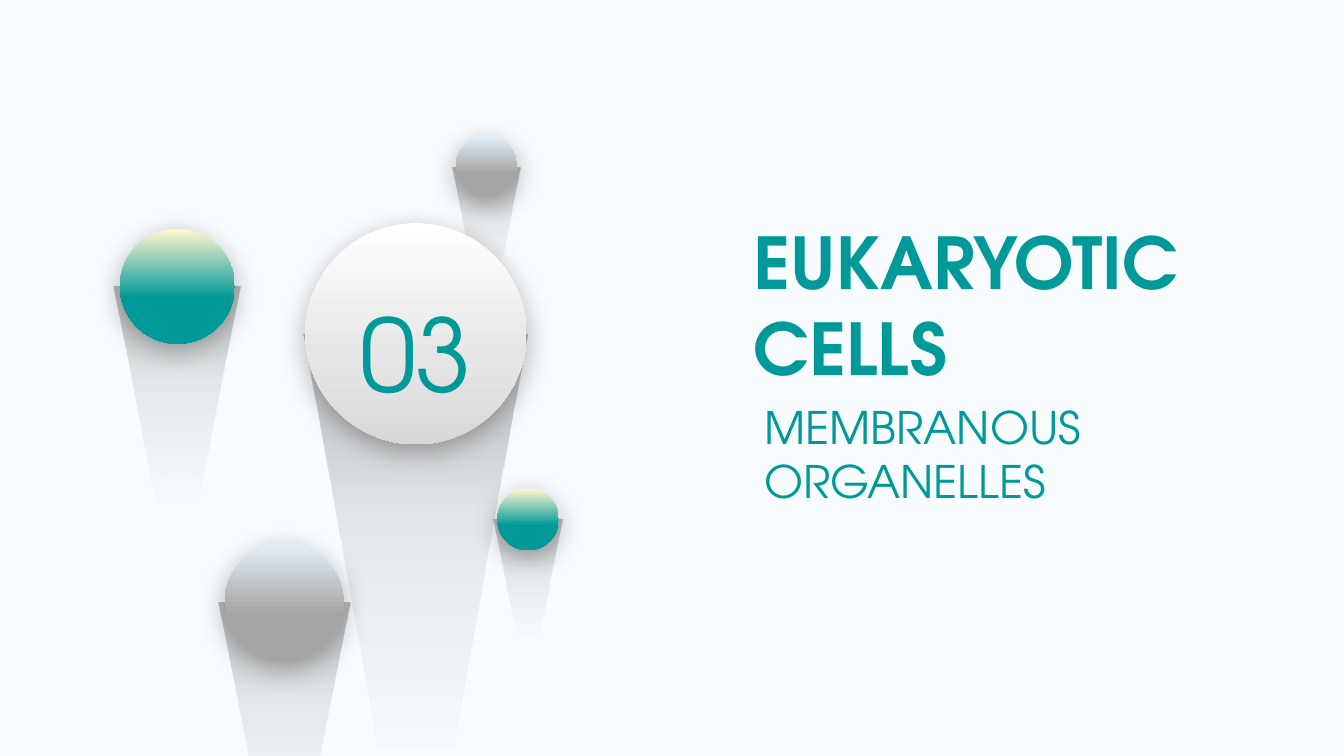
from lxml import etree
from pptx import Presentation
from pptx.dml.color import RGBColor
from pptx.enum import shapes, text
from pptx.oxml import ns
from pptx.util import Pt

FONT = "TeX Gyre Adventor"
HUES = {"back": "F8FCFE", "teal": "009999", "cream": "FFF5CE",
        "sky": "E1EFF9", "gray": "A5A5A5", "white": "FFFFFF",
        "pale": "E7E6E6", "silver": "D8D8D8", "black": "000000",
        "dark": "262626"}

# Gradient stops: position, colour, opacity (positions and opacity in percent)
TAIL = [(0, "black", 0), (30, "black", 0), (50, "black", 4),
        (70, "black", 8), (100, "dark", 30)]
TEAL = [(0, "cream", 100), (1, "cream", 100), (60, "teal", 100), (100, "teal", 100)]
GRAY = [(0, "sky", 100), (1, "sky", 100), (60, "gray", 100), (100, "gray", 100)]
WHITE = [(0, "white", 100), (60, "pale", 100), (100, "silver", 100)]

# Ball centre x and y, ball diameter, tail width and height, stops, label
BALLS = [
    (347.5, 119.1, 44, 49, 119.5, GRAY, ""),
    (297.1, 238.4, 158, 160, 427.7, WHITE, "03"),
    (202.9, 430.2, 85, 94, 230.4, GRAY, ""),
    (377.2, 371.1, 44, 49, 119.5, TEAL, ""),
    (126.7, 204.6, 82, 90.7, 222.3, TEAL, ""),
]

# Both sides of a tail as Bezier curves, in shares of its width and height
SIDES = [[(0.83, 0.67), (0.53, -0.02), (0.5, 0)],
         [(0.47, -0.02), (0.17, 0.67), (0, 1)]]


def shade(shape, stops):
    """Fill a shape from top to bottom, without line or shadow."""
    shape.shadow.inherit = False
    shape.line.fill.background()
    shape.fill.gradient()
    shape.fill.gradient_angle = 270
    ramp = shape._element.spPr.find(".//" + ns.qn("a:gsLst"))
    for old in list(ramp):
        ramp.remove(old)
    for place, hue, solid in stops:
        stop = etree.SubElement(ramp, ns.qn("a:gs"), pos=str(place * 1000))
        tint = etree.SubElement(stop, ns.qn("a:srgbClr"), val=HUES[hue])
        if solid < 100:
            etree.SubElement(tint, ns.qn("a:alpha"), val=str(solid * 1000))


def style(para, size, bold=False):
    para.font.name = FONT
    para.font.size = Pt(size)
    para.font.bold = bold
    para.font.color.rgb = RGBColor.from_string(HUES["teal"])


deck = Presentation()
deck.slide_width, deck.slide_height = Pt(960), Pt(540)
slide = deck.slides.add_slide(deck.slide_layouts[6])
slide.background.fill.solid()
slide.background.fill.fore_color.rgb = RGBColor.from_string(HUES["back"])

for x, y, size, wide, high, stops, label in BALLS:
    group = slide.shapes.add_group_shape()
    left, top = x - wide / 2, y + 0.4
    pen = group.shapes.build_freeform(Pt(left + wide), Pt(top + high))
    pen.add_line_segments([(Pt(x), Pt(top)), (Pt(left), Pt(top + high))], close=True)
    tail = pen.convert_to_shape()
    # Bend the two straight sides into curves
    lines = tail._element.spPr.findall(".//" + ns.qn("a:lnTo"))
    for line, side in zip(lines, SIDES):
        bend = etree.Element(ns.qn("a:cubicBezTo"))
        for px, py in side:
            etree.SubElement(bend, ns.qn("a:pt"),
                             x=str(Pt(px * wide)), y=str(Pt(py * high)))
        line.getparent().replace(line, bend)
    tail.rotation = 180
    shade(tail, TAIL)

    ball = group.shapes.add_shape(
        shapes.MSO_SHAPE.OVAL, Pt(x - size / 2), Pt(y - size / 2), Pt(size), Pt(size))
    shade(ball, stops)
    glow = etree.SubElement(
        ball._element.spPr.find(ns.qn("a:effectLst")), ns.qn("a:outerShdw"),
        blurRad=str(Pt(20)), dist=str(Pt(5)), dir="5400000", algn="ctr", rotWithShape="0")
    tint = etree.SubElement(glow, ns.qn("a:srgbClr"), val=HUES["black"])
    etree.SubElement(tint, ns.qn("a:alpha"), val="30000")
    if label:
        ball.text_frame.text = label
        ball.text_frame.vertical_anchor = text.MSO_ANCHOR.MIDDLE
        para = ball.text_frame.paragraphs[0]
        para.alignment = text.PP_ALIGN.CENTER
        para.line_spacing = 1.3
        style(para, 72)

TITLES = [
    ("EUKARYOTIC CELLS", 531.3, 194.7, 374.4, 87.1, 51, True, text.MSO_ANCHOR.BOTTOM),
    ("MEMBRANOUS ORGANELLES", 538.8, 282.2, 309.6, 145.4, 32, False, text.MSO_ANCHOR.TOP),
]
for words, left, top, wide, high, size, bold, anchor in TITLES:
    frame = slide.shapes.add_textbox(Pt(left), Pt(top), Pt(wide), Pt(high)).text_frame
    frame.word_wrap = True
    frame.vertical_anchor = anchor
    frame.text = words
    style(frame.paragraphs[0], size, bold)

deck.save("out.pptx")
